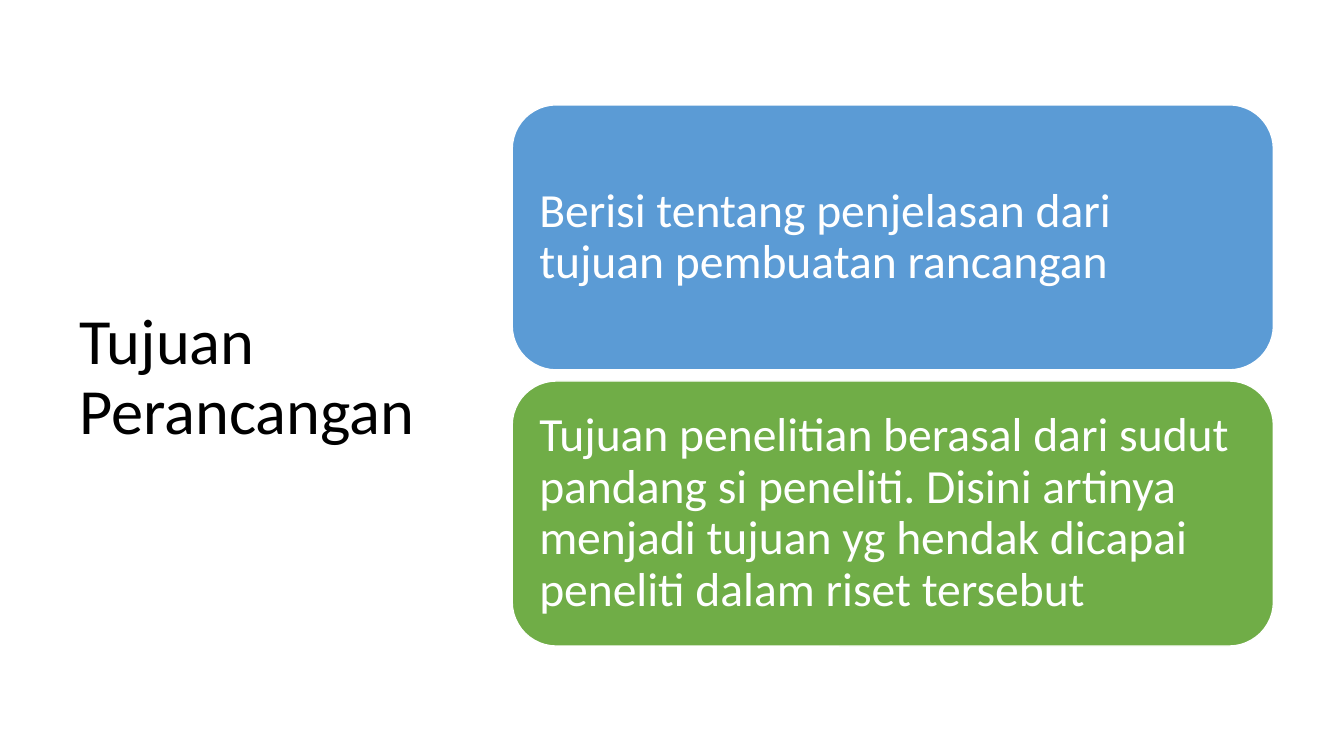
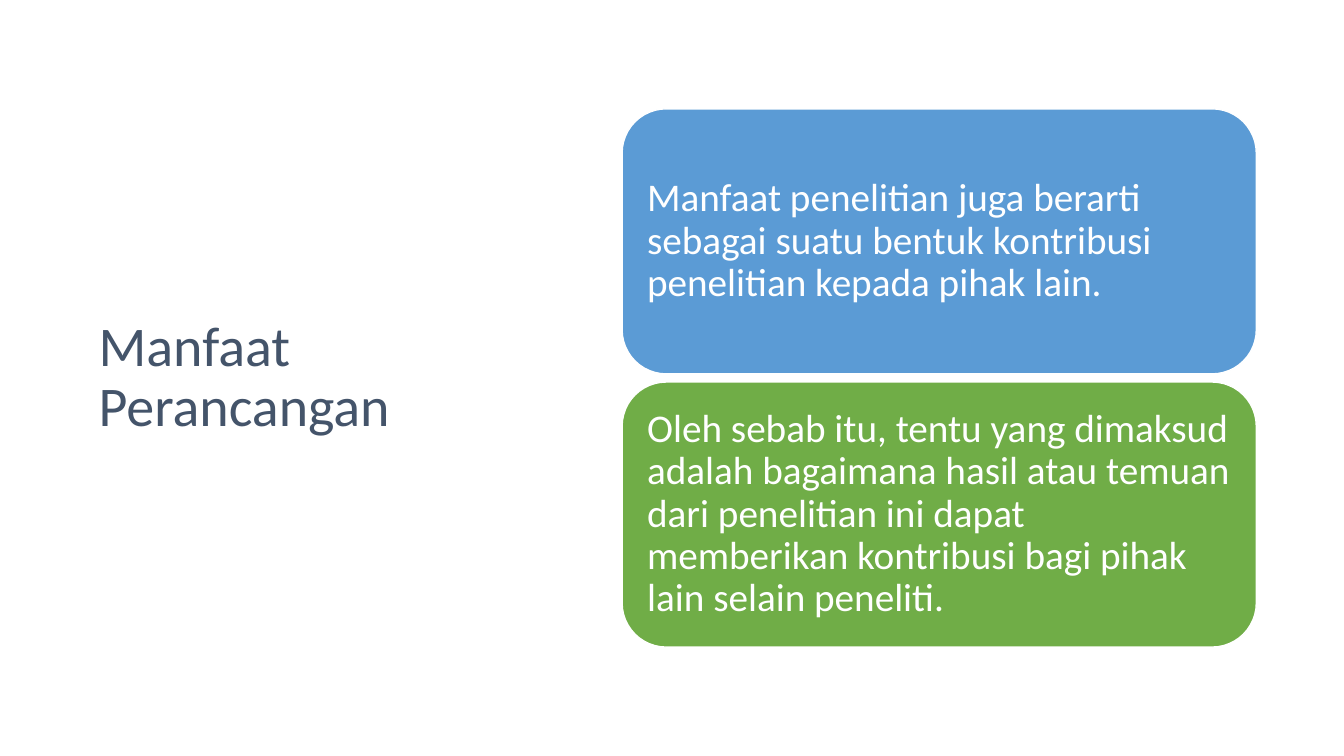
import pptx
import pptx.dml.color
import pptx.enum.shapes
import pptx.enum.text
import pptx.util

PX = 9144
FONT = "Calibri"
BLACK = pptx.dml.color.RGBColor(0x00, 0x00, 0x00)
WHITE = pptx.dml.color.RGBColor(0xFF, 0xFF, 0xFF)
SLATE = pptx.dml.color.RGBColor(0x44, 0x54, 0x6A)
BLUE = pptx.dml.color.RGBColor(0x5B, 0x9B, 0xD5)
GREEN = pptx.dml.color.RGBColor(0x70, 0xAD, 0x47)
CARD_FILLS = (BLUE, GREEN)
CARD_HEIGHT = 263


def write_text(shape, text, *, size, color, inset=None):
    frame = shape.text_frame
    frame.word_wrap = True
    frame.vertical_anchor = pptx.enum.text.MSO_ANCHOR.MIDDLE
    if inset is not None:
        frame.margin_left = frame.margin_right = inset * PX
        frame.margin_top = frame.margin_bottom = inset * PX
    para = frame.paragraphs[0]
    para.alignment = pptx.enum.text.PP_ALIGN.LEFT
    para.line_spacing = 0.9
    span = para.add_run()
    span.text = text
    span.font.name = FONT
    span.font.size = pptx.util.Pt(size)
    span.font.color.rgb = color


class Deck:
    """Build slides with a title on the left and stacked cards on the right."""

    def __init__(self):
        self.deck = pptx.Presentation()
        self.deck.slide_width = 1333 * PX
        self.deck.slide_height = 750 * PX
        self.page = None

    def add_page(self):
        self.page = self.deck.slides.add_slide(self.deck.slide_layouts[6])

    def title(self, text, left, top, width, height, **style):
        box = self.page.shapes.add_textbox(left * PX, top * PX, width * PX, height * PX)
        write_text(box, text, **style)

    def card(self, text, left, top, width, fill, **style):
        box = self.page.shapes.add_shape(
            pptx.enum.shapes.MSO_SHAPE.ROUNDED_RECTANGLE,
            left * PX, top * PX, width * PX, CARD_HEIGHT * PX)
        box.shadow.inherit = False
        box.fill.solid()
        box.fill.fore_color.rgb = fill
        box.line.color.rgb = WHITE
        box.line.width = pptx.util.Pt(1)
        write_text(box, text, color=WHITE, **style)

    def cards(self, texts, left, top, width, gap, **style):
        for row, (text, fill) in enumerate(zip(texts, CARD_FILLS)):
            self.card(text, left, top + row * (CARD_HEIGHT + gap), width, fill, **style)


def main():
    deck = Deck()

    deck.add_page()
    deck.title("Tujuan Perancangan", 69, 70, 374, 611, size=46, color=BLACK)
    deck.cards(
        ("Berisi tentang penjelasan dari tujuan pembuatan rancangan",
         "Tujuan penelitian berasal dari sudut pandang si peneliti. Disini artinya "
         "menjadi tujuan yg hendak dicapai peneliti dalam riset tersebut"),
        508, 104, 755, 11, size=34, inset=14)

    deck.add_page()
    deck.title("Manfaat Perancangan", 88, 169, 372, 413, size=40, color=SLATE)
    deck.cards(
        ("Manfaat penelitian juga berarti sebagai suatu bentuk kontribusi "
         "penelitian kepada pihak lain.",
         "Oleh sebab itu, tentu yang dimaksud adalah bagaimana hasil atau temuan "
         "dari penelitian ini dapat memberikan kontribusi bagi pihak lain selain "
         "peneliti."),
        617, 108, 629, 8, size=28, inset=12)

    deck.deck.save("out.pptx")


if __name__ == "__main__":
    main()
